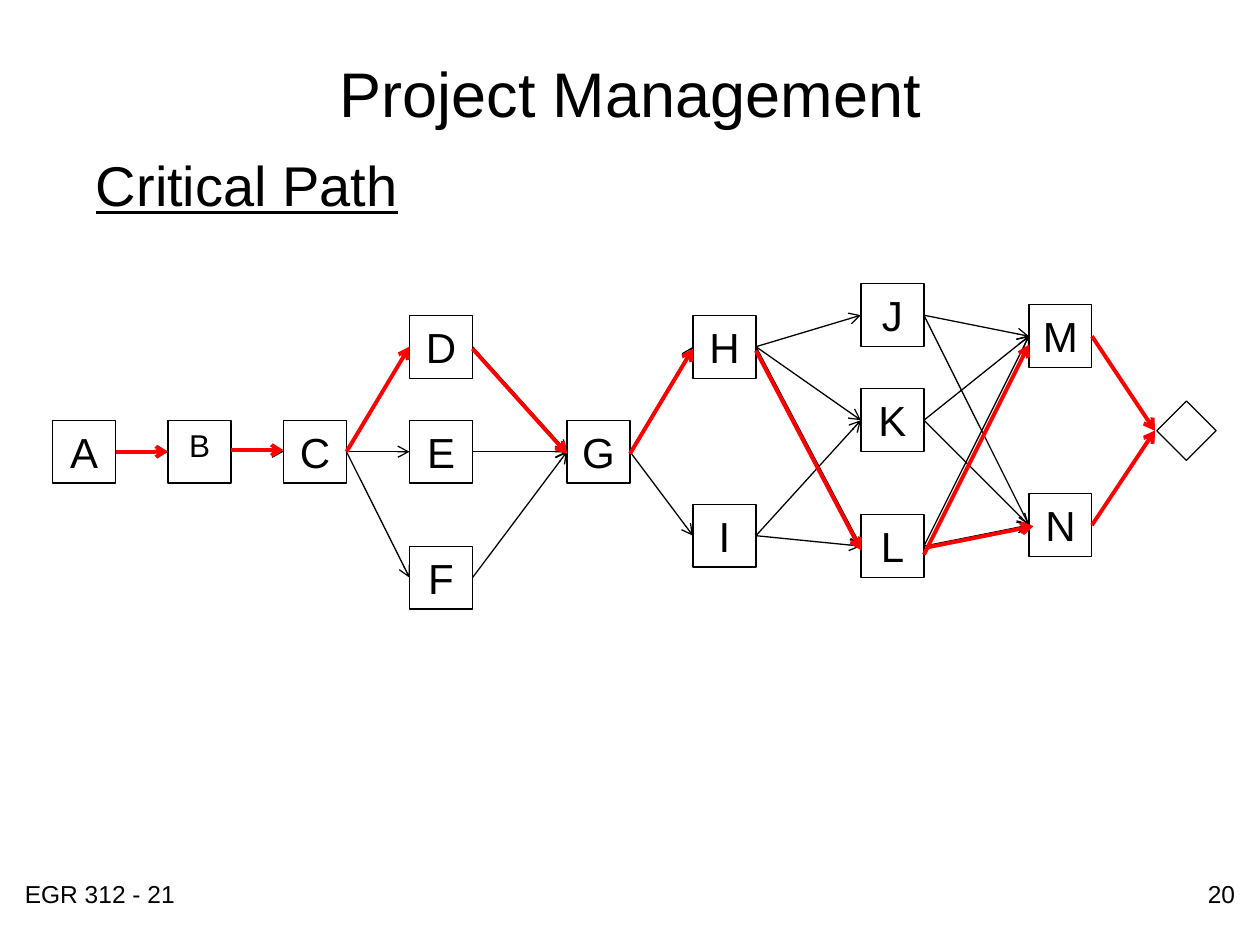
from pptx import Presentation
from pptx.dml.color import RGBColor
from pptx.enum.shapes import MSO_CONNECTOR, MSO_SHAPE
from pptx.enum.text import MSO_ANCHOR, PP_ALIGN
from pptx.oxml.ns import qn
from pptx.util import Cm, Pt
from lxml.etree import SubElement

FONT = "Arial"
BLACK, RED = "000000", "FF0000"

# The network lies on a grid 110 units wide; tasks are squares of 6 units
GRID_WIDTH, TASK_SIZE = 110, 6
TASKS = {
    "A": (0, 13), "B": (11, 13), "C": (22, 13),
    "D": (34, 3), "E": (34, 13), "F": (34, 25),
    "G": (49, 13), "H": (61, 3), "I": (61, 21),
    "J": (77, 0), "K": (77, 10), "L": (77, 22),
    "M": (93, 2), "N": (93, 20),
}
END = "End"
END_TIP = (105, 14)
END_CORNER, END_SIZE = (106, 12), 4
SUCCESSORS = {
    "A": "B", "B": "C", "C": "DEF", "D": "G", "E": "G", "F": "G",
    "G": "HI", "H": "JKL", "I": "KL", "J": "MN", "K": "MN", "L": "MN",
    "M": [END], "N": [END],
}
# Critical links with their small shift (right, down) in cm
CRITICAL_LINKS = {
    ("A", "B"): (0, 0), ("B", "C"): (0, -0.03), ("C", "D"): (0, 0),
    ("D", "G"): (0, 0.04), ("G", "H"): (0, 0.04), ("H", "L"): (0, 0.08),
    ("L", "M"): (0, 0.17), ("L", "N"): (0.09, 0.02),
    ("M", END): (0, 0), ("N", END): (0, 0),
}


def color(value):
    return RGBColor.from_string(value)


def place(shape, left, top, width, height):
    shape.left, shape.top = Cm(left), Cm(top)
    shape.width, shape.height = Cm(width), Cm(height)


def write(shape, text, size, align=PP_ALIGN.LEFT, anchor=MSO_ANCHOR.TOP):
    frame = shape.text_frame
    frame.word_wrap = True
    frame.vertical_anchor = anchor
    paragraph = frame.paragraphs[0]
    paragraph.alignment = align
    run = paragraph.add_run()
    run.text = text
    run.font.name, run.font.size = FONT, Pt(size)
    run.font.color.rgb = color(BLACK)
    return paragraph


def add_outline(shapes, kind, left, top, size):
    shape = shapes.add_shape(kind, Cm(left), Cm(top), Cm(size), Cm(size))
    shape.shadow.inherit = False
    shape.fill.background()
    shape.line.color.rgb = color(BLACK)
    shape.line.width = Pt(0.75)
    return shape


def add_arrow(shapes, start, end, line_color, width):
    connector = shapes.add_connector(
        MSO_CONNECTOR.STRAIGHT, *(Cm(value) for value in (*start, *end)))
    connector.line.color.rgb = color(line_color)
    connector.line.width = Pt(width)
    SubElement(connector.get_or_add_ln(), qn("a:tailEnd"), type="arrow")
    SubElement(connector._element.spPr, qn("a:effectLst"))


def add_headings(slide, left, top, width):
    title, body = slide.placeholders
    place(title, left + 0.23, top, width - 0.46, 2.62)
    write(title, "Project Management", 36, PP_ALIGN.CENTER, MSO_ANCHOR.MIDDLE)
    place(body, left, top + 2.34, width, 11.07)
    paragraph = write(body, "Critical Path", 32)
    paragraph.runs[0].font.underline = True
    # No bullet and no hanging indent
    properties = paragraph._p.get_or_add_pPr()
    properties.set("marL", "0")
    properties.set("indent", "0")
    SubElement(properties, qn("a:buNone"))


def add_network(slide, left, top, width):
    unit = width / GRID_WIDTH

    def point(column, row):
        return left + column * unit, top + row * unit

    def link_ends(source, target, shift=(0, 0)):
        column, row = TASKS[source]
        start = point(column + TASK_SIZE, row + TASK_SIZE / 2)
        if target == END:
            end = point(*END_TIP)
        else:
            column, row = TASKS[target]
            end = point(column, row + TASK_SIZE / 2)
        return [(x + shift[0], y + shift[1]) for x, y in (start, end)]

    # Tasks
    network = slide.shapes.add_group_shape().shapes
    for name, corner in TASKS.items():
        task = add_outline(network, MSO_SHAPE.RECTANGLE, *point(*corner),
                           TASK_SIZE * unit)
        size = 18 if name == "B" else 24
        paragraph = write(task, name, size, PP_ALIGN.CENTER)
        paragraph.space_before = Pt(size / 8)

    # End milestone
    milestone = add_outline(network, MSO_SHAPE.RECTANGLE, *point(*END_CORNER),
                            END_SIZE * unit)
    milestone.rotation = 45

    # All links
    for source, targets in SUCCESSORS.items():
        for target in targets:
            add_arrow(network, *link_ends(source, target), BLACK, 0.75)
    add_arrow(slide.shapes, *link_ends("L", "N", (0.05, 0)), BLACK, 0.75)

    # Critical path
    critical_path = slide.shapes.add_group_shape().shapes
    for (source, target), shift in CRITICAL_LINKS.items():
        add_arrow(critical_path, *link_ends(source, target, shift), RED, 2.25)


def add_footer(slide, left, top, width, height):
    box_width = 5.92
    for text, offset, align in (
            ("EGR 312 - 21", 0, PP_ALIGN.LEFT),
            ("20", width - box_width, PP_ALIGN.RIGHT)):
        box = slide.shapes.add_textbox(
            Cm(left + offset), Cm(top), Cm(box_width), Cm(height))
        write(box, text, 14, align)


def main():
    presentation = Presentation()
    presentation.slide_width, presentation.slide_height = Cm(25.4), Cm(19.05)
    slide = presentation.slides.add_slide(presentation.slide_layouts[1])
    add_footer(slide, 0.25, 17.6, 24.9, 1.32)
    add_headings(slide, 1.68, 0.56, 22.05)
    add_network(slide, 1.06, 5.72, 23.28)
    presentation.save("out.pptx")


if __name__ == "__main__":
    main()
